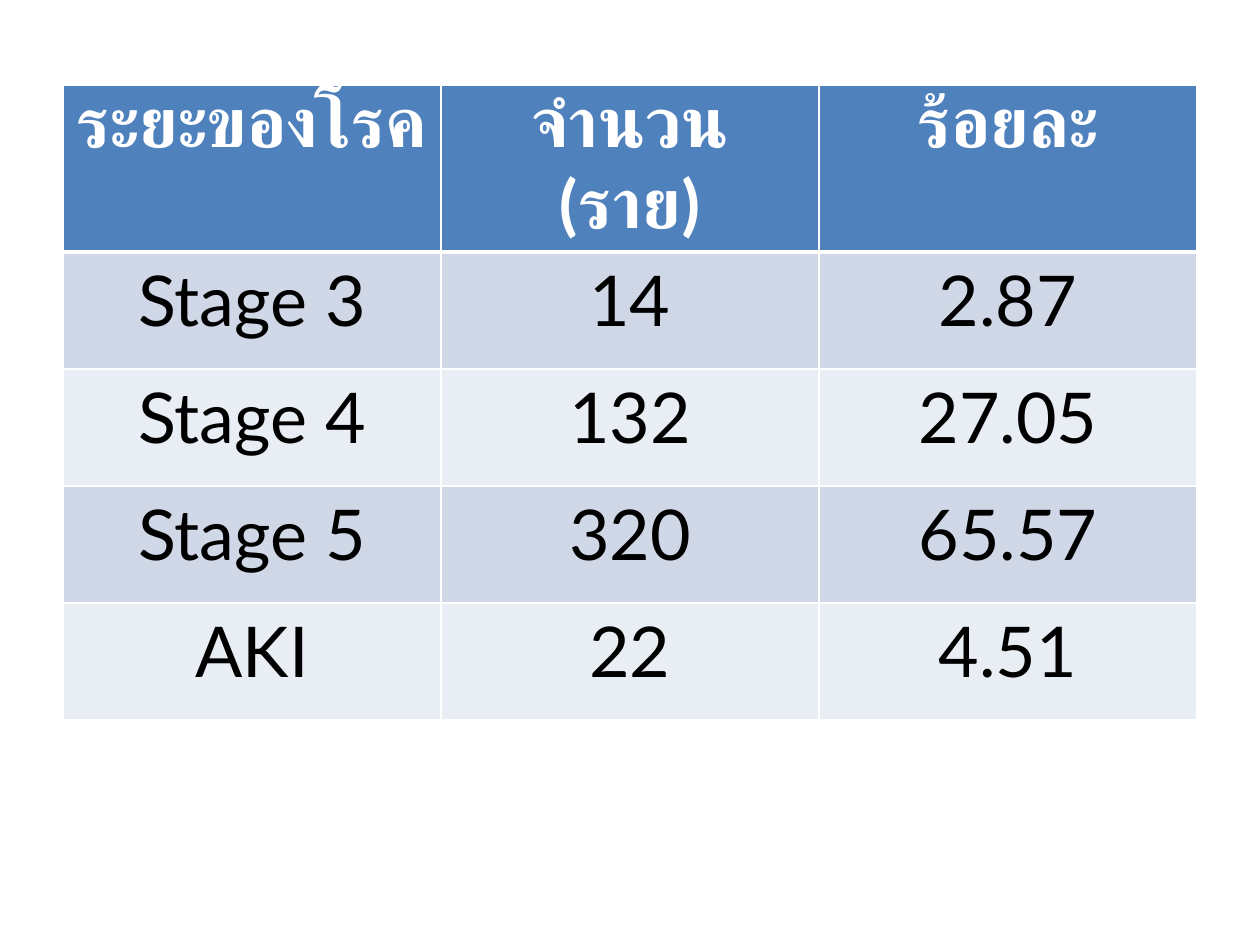
"""Build a slide with a table of patients by stage of kidney disease."""
from dataclasses import dataclass

from lxml.etree import SubElement
from pptx import Presentation
from pptx.dml.color import RGBColor
from pptx.enum.text import PP_ALIGN
from pptx.oxml.ns import qn
from pptx.util import Pt

PX = 914400 // 126
WHITE = RGBColor(0xFF, 0xFF, 0xFF)
BLACK = RGBColor(0x00, 0x00, 0x00)
BLUE = RGBColor(0x4F, 0x81, 0xBD)
BAND_DARK = RGBColor(0xD0, 0xD8, 0xE8)
BAND_LIGHT = RGBColor(0xE9, 0xED, 0xF4)

LEFT, TOP, COLUMN_WIDTH = 63, 85, 378
HEADER_HEIGHT, STAGE_HEIGHT = 167, 117


@dataclass(frozen=True)
class RowStyle:
    """Look shared by all cells of a row."""
    fill: RGBColor
    color: RGBColor
    font: str
    bold: bool
    height: int
    side_margin: int
    line_spacing: float | Pt
    top_line: int = 1
    bottom_line: int = 1


HEADER = RowStyle(BLUE, WHITE, "Calibri", True, HEADER_HEIGHT, 12, Pt(46.5), bottom_line=3)
FIRST = RowStyle(BAND_DARK, BLACK, "Lato", False, STAGE_HEIGHT, 9, 1.07, top_line=3)
DARK = RowStyle(BAND_DARK, BLACK, "Lato", False, STAGE_HEIGHT, 9, 1.07)
LIGHT = RowStyle(BAND_LIGHT, BLACK, "Lato", False, STAGE_HEIGHT, 9, 1.07)

STAGES = [
    (HEADER, ("ระยะของโรค", "จำนวน (ราย)", "ร้อยละ")),
    (FIRST, ("Stage 3", "14", "2.87")),
    (LIGHT, ("Stage 4", "132", "27.05")),
    (DARK, ("Stage 5", "320", "65.57")),
    (LIGHT, ("AKI", "22", "4.51")),
]


def set_borders(cell, style: RowStyle) -> None:
    """Draw white lines on the four sides of a cell."""
    properties = cell._tc.get_or_add_tcPr()
    widths = {"lnL": 1, "lnR": 1, "lnT": style.top_line, "lnB": style.bottom_line}
    for position, (side, width) in enumerate(widths.items()):
        line = SubElement(properties, qn(f"a:{side}"), w=str(Pt(width)))
        SubElement(SubElement(line, qn("a:solidFill")), qn("a:srgbClr"), val=str(WHITE))
        properties.insert(position, line)


def fill_cell(cell, text: str, style: RowStyle) -> None:
    """Write and format one cell."""
    cell.margin_left = cell.margin_right = style.side_margin * PX
    cell.margin_top = cell.margin_bottom = 0
    cell.fill.solid()
    cell.fill.fore_color.rgb = style.fill
    set_borders(cell, style)
    cell.text_frame.text = text
    paragraph = cell.text_frame.paragraphs[0]
    paragraph.alignment = PP_ALIGN.CENTER
    paragraph.line_spacing = style.line_spacing
    font = paragraph.runs[0].font
    font.name, font.size, font.bold = style.font, Pt(40), style.bold
    font.color.rgb = style.color
    SubElement(font._element, qn("a:cs"), typeface=style.font)


def main() -> None:
    """Create and save the slide."""
    presentation = Presentation()
    presentation.slide_width, presentation.slide_height = 1260 * PX, 945 * PX
    slide = presentation.slides.add_slide(presentation.slide_layouts[6])
    columns = len(STAGES[0][1])
    height = sum(style.height for style, _ in STAGES)
    table = slide.shapes.add_table(
        len(STAGES), columns, LEFT * PX, TOP * PX,
        columns * COLUMN_WIDTH * PX, height * PX,
    ).table
    for row, (style, texts) in enumerate(STAGES):
        table.rows[row].height = style.height * PX
        for column, text in enumerate(texts):
            fill_cell(table.cell(row, column), text, style)
    presentation.save("out.pptx")


if __name__ == "__main__":
    main()
